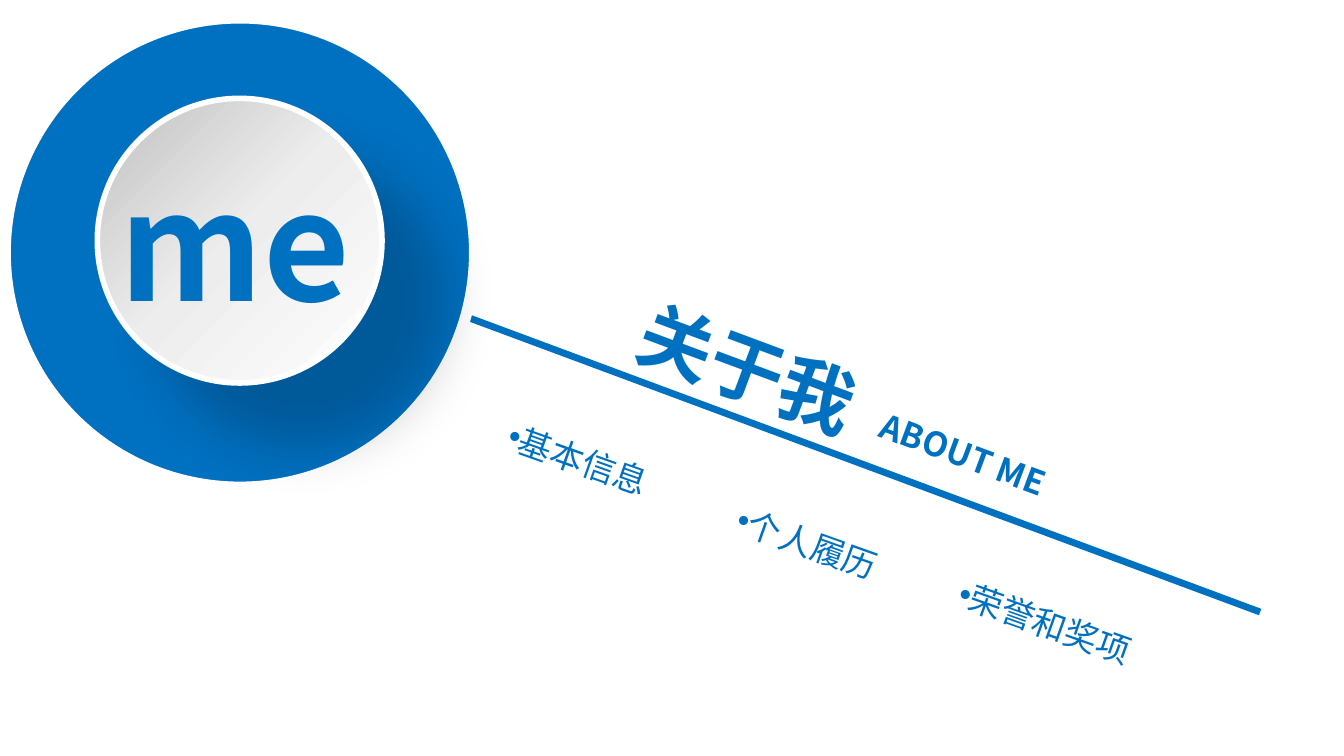
from copy import deepcopy
from dataclasses import dataclass

from lxml import etree
from pptx import Presentation
from pptx.dml.color import RGBColor
from pptx.enum.shapes import MSO_SHAPE
from pptx.enum.text import MSO_ANCHOR, MSO_AUTO_SIZE, PP_ALIGN
from pptx.oxml.ns import qn
from pptx.util import Cm, Pt

RECT, OVAL = MSO_SHAPE.RECTANGLE, MSO_SHAPE.OVAL
CENTER, MIDDLE = PP_ALIGN.CENTER, MSO_ANCHOR.MIDDLE
GROW = MSO_AUTO_SIZE.SHAPE_TO_FIT_TEXT


@dataclass(frozen=True)
class Theme:
    font: str = "Noto Sans CJK SC"
    blue: RGBColor = RGBColor(0x00, 0x70, 0xC0)
    white: RGBColor = RGBColor(0xFF, 0xFF, 0xFF)
    disc: tuple = ((0, "C0C0C0"), (0.49, "EDEDED"), (1, "FFFFFF"))
    logo_size: int = 80
    title_size: int = 40
    body_size: int = 18


THEME = Theme()
SLOPE = 20.4
ITEM_SLOPE = 19.6


def add_shape(s, kind, box, rotation=0, line=None):
    """Blue shape; line is the width of a white outline in points."""
    sp = s.shapes.add_shape(kind, *map(Cm, box))
    sp.rotation = rotation
    sp.shadow.inherit = False
    sp.fill.solid()
    sp.fill.fore_color.rgb = THEME.blue
    if line:
        sp.line.color.rgb = THEME.white
        sp.line.width = Pt(line)
    else:
        sp.line.fill.background()
    return sp


def set_gradient(sp, stops, angle):
    sp.fill.gradient()
    sp.fill.gradient_angle = angle
    gs_list = sp.fill.gradient_stops[0]._gs.getparent()
    gs_list.insert(1, deepcopy(gs_list[0]))
    for stop, (position, color) in zip(sp.fill.gradient_stops, stops):
        stop.position = position
        stop.color.rgb = RGBColor.from_string(color)


def add_shadow(sp, blur, distance, degrees, opacity):
    effects = sp._element.spPr.find(qn("a:effectLst"))
    shadow = etree.SubElement(effects, qn("a:outerShdw"), blurRad=str(Pt(blur)),
                              dist=str(Pt(distance)), dir=str(degrees * 60000),
                              algn="tl", rotWithShape="0")
    color = etree.SubElement(shadow, qn("a:srgbClr"), val="000000")
    etree.SubElement(color, qn("a:alpha"), val=str(opacity * 1000))


def add_text(s, text, box, size, rotation=0, bold=True):
    sp = s.shapes.add_textbox(*map(Cm, box))
    sp.rotation = rotation
    tf = sp.text_frame
    tf.word_wrap = True
    tf.auto_size = GROW
    tf.text = text
    r = tf.paragraphs[0].runs[0]
    r.font.name = THEME.font
    r.font.size = Pt(size)
    r.font.bold = bold
    r.font.color.rgb = THEME.blue
    etree.SubElement(r.font._element, qn("a:ea"), typeface=THEME.font)
    return tf


def add_bullet(s, text, box):
    tf = add_text(s, text, box, THEME.body_size, ITEM_SLOPE, bold=False)
    tf.word_wrap = False
    tf.vertical_anchor = MIDDLE
    p = tf.paragraphs[0]
    p.line_spacing = 1.2
    pPr = p._p.get_or_add_pPr()
    pPr.set("marL", "0")
    pPr.set("indent", str(-Cm(0.5)))
    etree.SubElement(pPr, qn("a:buFont"), typeface="Arial")
    etree.SubElement(pPr, qn("a:buChar"), char="•")


def main():
    prs = Presentation()
    prs.slide_width, prs.slide_height = Cm(25.4), Cm(14.29)
    s = prs.slides.add_slide(prs.slide_layouts[6])

    # Sloping bar and the round badge
    add_shape(s, RECT, (7.9, 8.64, 16.43, 0.13), SLOPE)
    add_shape(s, OVAL, (0.1, 0.34, 8.87, 8.87), line=6)
    disc = add_shape(s, OVAL, (1.84, 1.86, 5.38, 5.38), line=3)
    set_gradient(disc, THEME.disc, 315)
    add_shadow(disc, blur=29, distance=46, degrees=45, opacity=20)

    tf = add_text(s, "me", (2.13, 2.87, 4.62, 3.43), THEME.logo_size)
    tf.margin_left = tf.margin_right = tf.margin_top = tf.margin_bottom = 0
    tf.paragraphs[0].alignment = CENTER

    # Title above the bar
    for text, box, size in (
        ("关于我", (11.71, 6.73, 8.81, 1.9), THEME.title_size),
        ("ABOUT ME", (16.26, 8.84, 7.87, 0.97), THEME.body_size),
    ):
        tf = add_text(s, text, box, size, SLOPE)
        tf.margin_left = tf.margin_right = Cm(0.18)
        tf.margin_top = tf.margin_bottom = Cm(0.1)

    # Topics below the bar
    for text, left, top, width in (
        ("基本信息", 9.22, 8.66, 6.83),
        ("个人履历", 13.64, 9.7, 3.58),
        ("荣誉和奖项", 17.81, 11.2, 4.22),
    ):
        add_bullet(s, text, (left, top, width, 1.09))

    prs.save("out.pptx")


if __name__ == "__main__":
    main()
